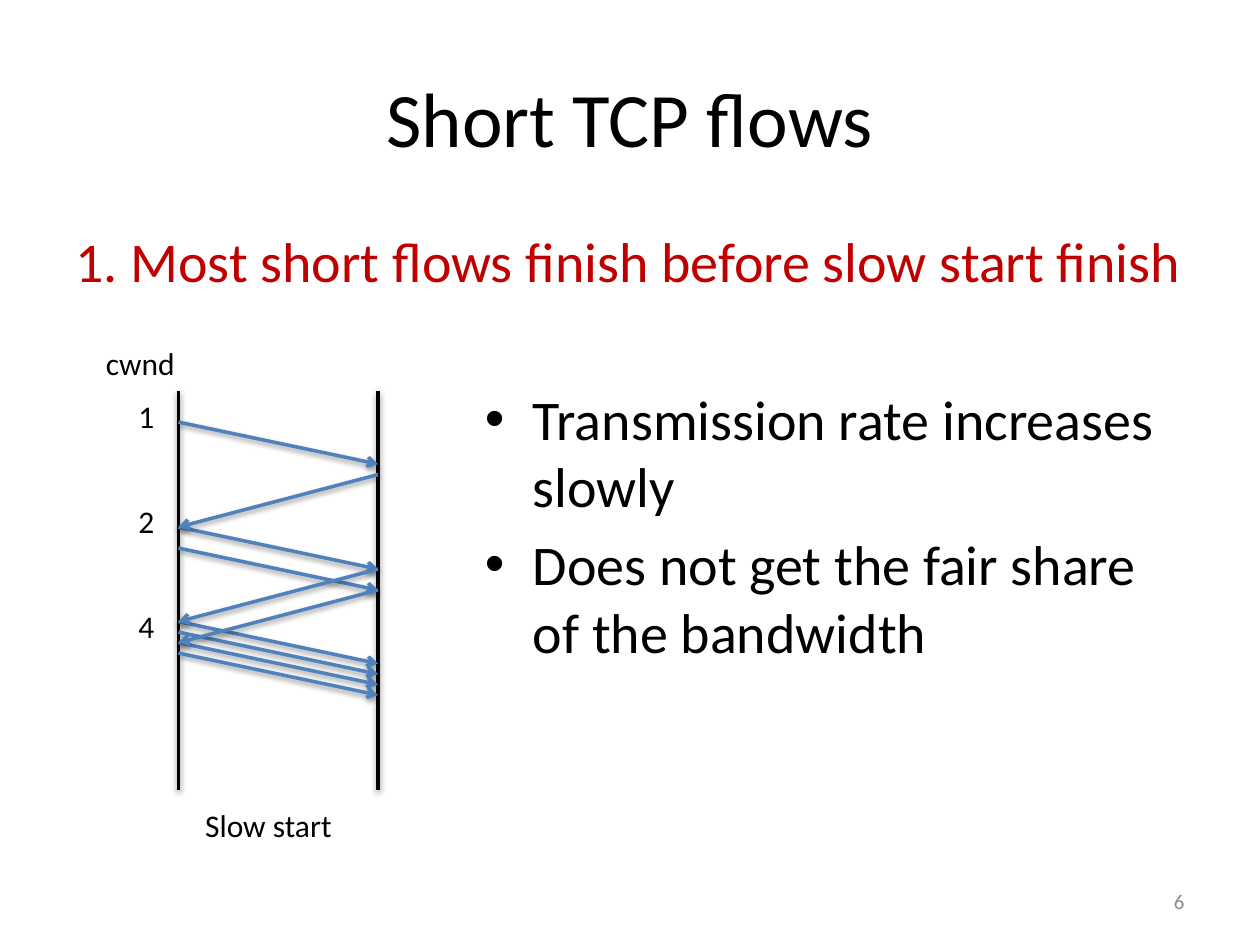
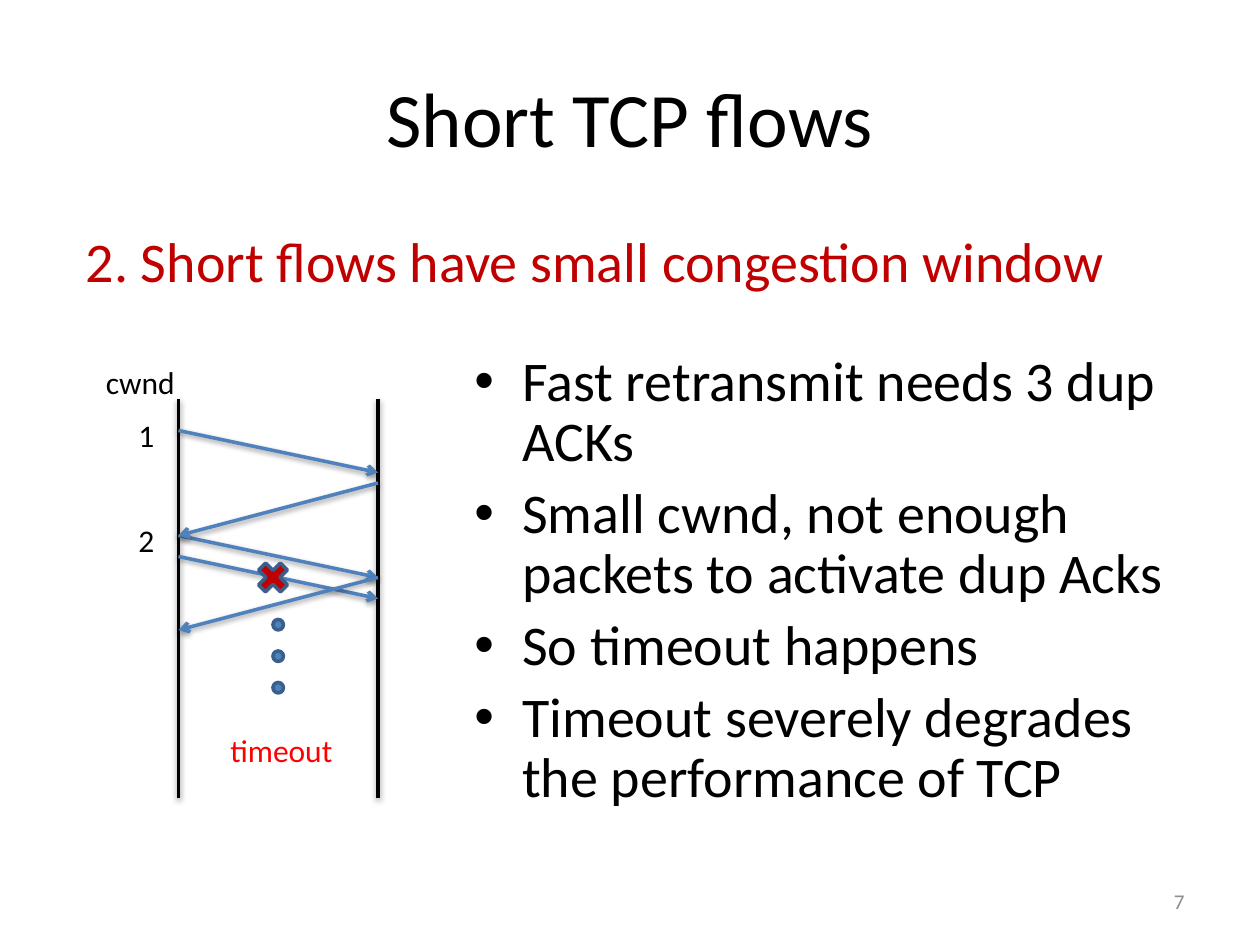
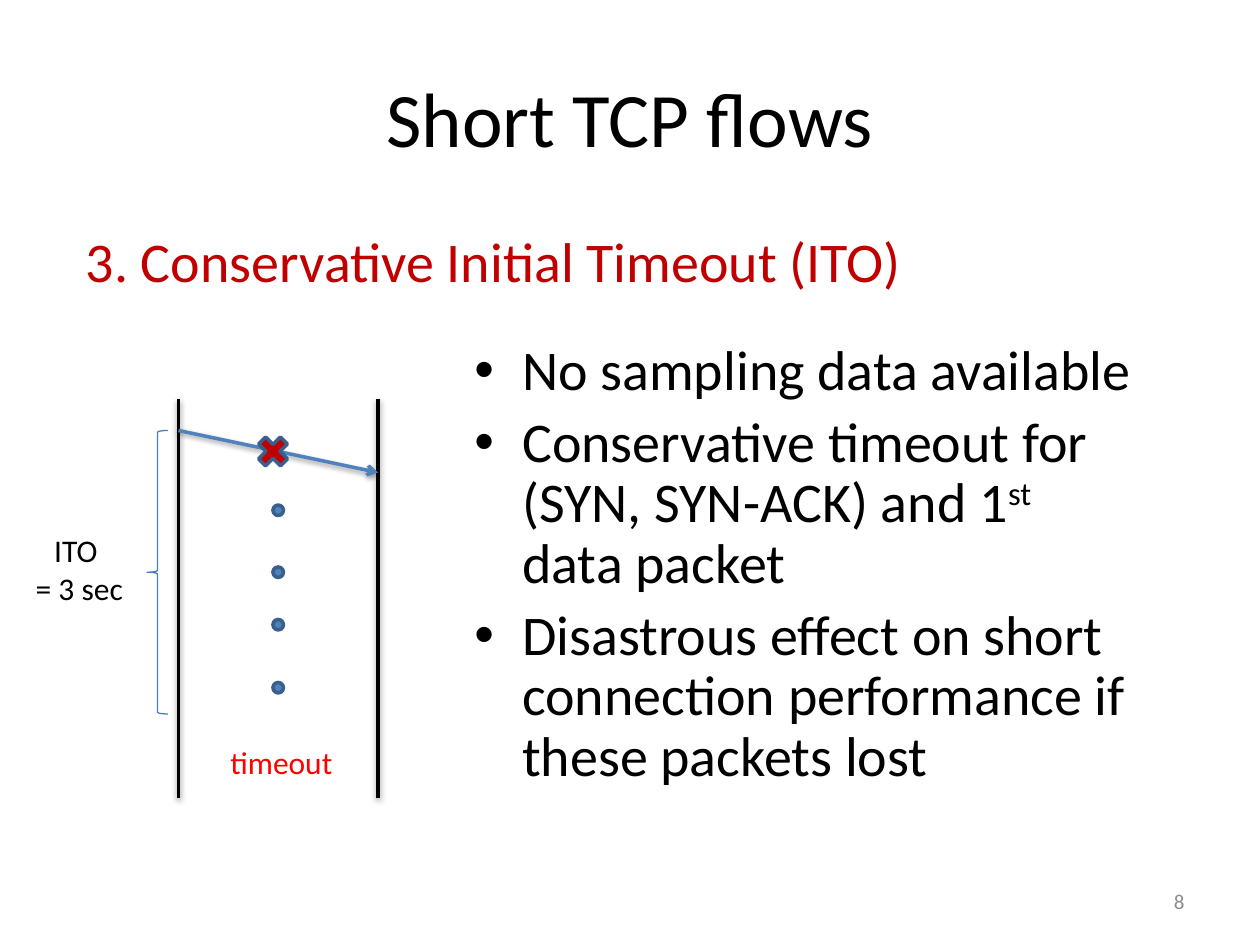
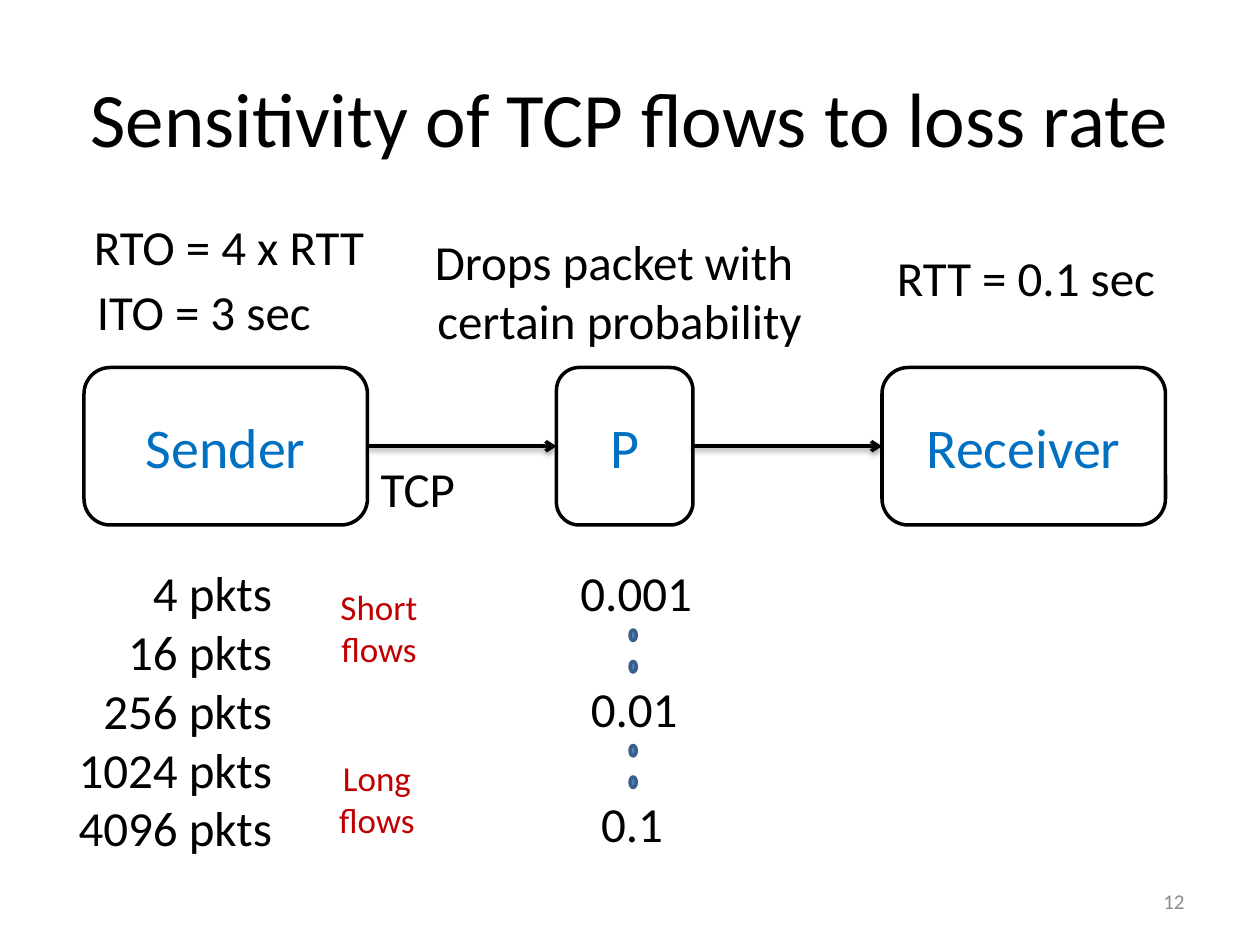
from collections import namedtuple

from lxml.etree import SubElement
from pptx import Presentation
from pptx.dml.color import RGBColor
from pptx.enum.shapes import MSO_CONNECTOR, MSO_SHAPE
from pptx.enum.text import MSO_ANCHOR, MSO_AUTO_SIZE, PP_ALIGN
from pptx.oxml import parse_xml
from pptx.oxml.ns import nsdecls, qn
from pptx.util import Inches, Pt

BLACK = RGBColor(0x00, 0x00, 0x00)
WHITE = RGBColor(0xFF, 0xFF, 0xFF)
CRIMSON = RGBColor(0xC0, 0x00, 0x00)
RED = RGBColor(0xFF, 0x00, 0x00)
BLUE = RGBColor(0x4F, 0x81, 0xBD)
NAVY = RGBColor(0x3A, 0x5F, 0x8C)
STEEL = RGBColor(0x4B, 0x7E, 0xBC)
SKY = RGBColor(0x00, 0x70, 0xC0)
GREY = RGBColor(0x8C, 0x8C, 0x8C)

FONT = "Calibri"
WIDTH, HEIGHT = Inches(10), Inches(7.5)
COLS, ROWS = 120, 90
CELL = WIDTH / COLS
LEFT, MID, RIGHT = PP_ALIGN.LEFT, PP_ALIGN.CENTER, PP_ALIGN.RIGHT
SHADOW = (
    f'<a:effectLst {nsdecls("a")}><a:outerShdw blurRad="40000" dist="20000" '
    'dir="5400000" rotWithShape="0"><a:srgbClr val="000000">'
    '<a:alpha val="38000"/></a:srgbClr></a:outerShdw></a:effectLst>'
)

Box = namedtuple("Box", "x y w h")
TITLE = Box(6, 3.6, 108, 15)
FOOTER = Box(86, 83.4, 28, 4.8)


def part(box, x, y, w, h):
    """Return a box placed by its offset inside another box."""
    return Box(box.x + x, box.y + y, w, h)


def emu(box):
    """Turn grid units into slide lengths."""
    return [round(n * CELL) for n in box]


def style(run, size, color):
    """Set the font of one run."""
    run.font.name, run.font.size = FONT, Pt(size)
    run.font.color.rgb = color


def write(slide, box, text, size, color=BLACK, align=LEFT, wrap=False, anchor=MSO_ANCHOR.TOP):
    """Add a text box, with parts between carets raised."""
    frame = slide.shapes.add_textbox(*emu(box)).text_frame
    frame.word_wrap = wrap
    frame.auto_size = MSO_AUTO_SIZE.NONE if wrap else MSO_AUTO_SIZE.SHAPE_TO_FIT_TEXT
    frame.vertical_anchor = anchor
    frame.text = text
    for para in frame.paragraphs:
        para.alignment = align
        first, *rest = para.text.split("^")
        para.text = first
        for piece in rest:
            para.add_run().text = piece
        for num, run in enumerate(para.runs):
            style(run, size, color)
            if num % 2:
                run.font._element.set("baseline", "30000")
    return frame


def hang(frame, bullet=False, space=None):
    """Give each paragraph a hanging indent and a gap above."""
    for para in frame.paragraphs:
        para.space_before, para.line_spacing = Pt(6.4), space
        props = para._p.get_or_add_pPr()
        props.set("marL", str(Inches(0.38)))
        props.set("indent", str(-Inches(0.38)))
        if bullet:
            SubElement(props, qn("a:buFont")).set("typeface", "Arial")
            SubElement(props, qn("a:buChar")).set("char", "•")


def form(slide, kind, box, fill, color, weight=2):
    """Add a preset shape without shadow."""
    shape = slide.shapes.add_shape(kind, *emu(box))
    shape.shadow.inherit = False
    if fill is None:
        shape.fill.background()
    else:
        shape.fill.solid()
        shape.fill.fore_color.rgb = fill
    shape.line.color.rgb, shape.line.width = color, Pt(weight)
    return shape


def link(slide, start, end, color, head=True):
    """Add a shadowed line between two grid points."""
    line = slide.shapes.add_connector(MSO_CONNECTOR.STRAIGHT, *emu(start + end))
    line.line.color.rgb, line.line.width = color, Pt(2)
    if head:
        SubElement(line.line._get_or_add_ln(), qn("a:tailEnd")).set("type", "arrow")
    line._element.spPr.append(parse_xml(SHADOW))
    return line


def frame(deck, title, number):
    """Start a slide with its title and page number."""
    slide = deck.slides.add_slide(deck.slide_layouts[6])
    write(slide, TITLE, title, 44, align=MID, wrap=True, anchor=MSO_ANCHOR.MIDDLE)
    write(slide, FOOTER, str(number), 12, GREY, RIGHT, True, MSO_ANCHOR.MIDDLE)
    return slide


def point(deck, number, head, box, items, area, space=None):
    """Build a slide with a red heading and a bullet list."""
    slide = frame(deck, "Short TCP flows", number)
    hang(write(slide, box, head, 32, CRIMSON, wrap=True))
    hang(write(slide, area, "\n".join(items), 32, wrap=True), True, space)
    return slide


def lanes(slide, box, sends, acks=()):
    """Draw two time lines with packets right and replies left."""
    near, far = box.x, box.x + box.w
    for x in (near, far):
        link(slide, (x, box.y), (x, box.y + box.h), BLACK, False)
    for row in sends:
        link(slide, (near, box.y + row), (far, box.y + row + 4), BLUE)
    for row in acks:
        link(slide, (far, box.y + row), (near, box.y + row + 5), BLUE)


def window(slide, box, sizes, shift=0):
    """Label the congestion window beside the time lines."""
    write(slide, part(box, -8.1, shift - 5, 9.1, 4.8), "cwnd", 18)
    for num, size in enumerate(sizes):
        write(slide, part(box, -5, shift + 10 * num, 4, 4.8), size, 18)


def dots(slide, box, rows, w=1):
    """Stack small dots at the given rows."""
    for row in rows:
        form(slide, MSO_SHAPE.FLOWCHART_CONNECTOR, part(box, 0, row, w, 1), BLUE, NAVY)


def loss(slide, box, cross, rows, label):
    """Mark a lost packet and the wait that ends in a timeout."""
    form(slide, MSO_SHAPE.MATH_MULTIPLY, part(box, 7, cross, 4, 4), CRIMSON, NAVY)
    dots(slide, part(box, 9, 0, 1, box.h), rows)
    write(slide, part(box, 3.76, label, 12.2, 4.8), "timeout", 18, RED)


def wait(slide, box):
    """Bracket the initial timeout beside the time lines."""
    form(slide, MSO_SHAPE.LEFT_BRACE, part(box, -3, 3, 2, 27), None, STEEL, 0.75)
    write(slide, part(box, -14.84, 12, 10.8, 8.5), "ITO \n= 3 sec", 18, align=MID)


def chain(slide, box, names, widths):
    """Draw named boxes with equal gaps, joined by arrows."""
    gap = (box.w - sum(widths)) / (len(widths) - 1)
    x, last = 0, None
    for name, w in zip(names, widths):
        node = form(slide, MSO_SHAPE.ROUNDED_RECTANGLE, part(box, x, 0, w, box.h), WHITE, BLACK)
        node.text_frame.text = name
        para = node.text_frame.paragraphs[0]
        para.alignment = MID
        style(para.runs[0], 32, SKY)
        if last:
            line = link(slide, (0, 0), (1, 1), BLACK)
            line.begin_connect(last, 3)
            line.end_connect(node, 1)
        x, last = x + w + gap, node


def facts(slide, box):
    """Write the timing notes around the chain."""
    notes = [
        ("Drops packet with \ncertain probability", 32, -13.5, 38, 12.5),
        ("RTO = 4 x RTT", -0.4, -15, 28.4, 6.8),
        ("RTT = 0.1 sec", 76, -12, 27.4, 6.8),
        ("ITO = 3 sec", -0.1, -8.8, 23, 6.8),
        ("TCP", 27, 8.1, 9.6, 6.8),
    ]
    for text, *place in notes:
        write(slide, part(box, *place), text, 28, align=MID)


def flows(slide, box):
    """List the flow sizes and the groups they form."""
    sizes = "\n".join(f"{4 ** n} pkts" for n in (1, 2, 4, 5, 6))
    write(slide, part(box, 0, 0, 21.1, box.h), sizes, 28, align=RIGHT)
    for name, x, y in (("Short", 25.2, 2.2), ("Long", 25, 18.5)):
        write(slide, part(box, x, y, 9.8, 9.2), f"{name}\nflows", 20, CRIMSON, MID)


def rates(slide, box):
    """List the loss rates with dots between them."""
    step = 11
    for num, rate in enumerate(("0.001", "0.01", "0.1")):
        w = box.w - 2.4 * num
        write(slide, part(box, num, step * num, w, 6.8), rate, 28, align=MID)
    spots = [step * num + row for num in range(2) for row in (7, 10)]
    dots(slide, part(box, 6, 0, 1, box.h), spots, 0.6)


def main():
    """Build the four slides and save them."""
    deck = Presentation()
    deck.slide_width, deck.slide_height = WIDTH, HEIGHT
    head = Box(7, 21, 108, 12)
    high, low = Box(17, 37.2, 19, 38), Box(17, 38, 19, 38)

    slide = point(
        deck, 6, "1. Most short flows finish before slow start finish", Box(6, 21, 108, 11),
        ["Transmission rate increases slowly", "Does not get the fair share of the bandwidth"],
        Box(45, 36, 68, 36),
    )
    lanes(slide, high, (3, 13, 15, 22, 23, 24, 25), (8, 17, 19))
    window(slide, high, "124")
    write(slide, part(high, 1.36, 39, 14.6, 4.8), "Slow start", 18)

    slide = point(
        deck, 7, "2. Short flows have small congestion window", head,
        ["Fast retransmit needs 3 dup ACKs",
         "Small cwnd, not enough packets to activate dup Acks",
         "So timeout happens",
         "Timeout severely degrades the performance of TCP"],
        Box(44, 33, 69, 46), 0.9,
    )
    lanes(slide, low, (3, 13, 15), (8, 17))
    window(slide, low, "12", 1)
    loss(slide, low, 15, (21, 24, 27), 31)

    slide = point(
        deck, 8, "3. Conservative Initial Timeout (ITO)", head,
        ["No sampling data available",
         "Conservative timeout for (SYN, SYN-ACK) and 1^st^ data packet",
         "Disastrous effect on short connection performance if these packets lost"],
        Box(44, 32, 66, 48), 0.9,
    )
    lanes(slide, low, (3,))
    loss(slide, low, 3, (10.1, 16, 21, 27), 32.2)
    wait(slide, low)

    slide = frame(deck, "Sensitivity of TCP flows to loss rate", 12)
    path = Box(8, 35, 103, 15)
    chain(slide, path, ("Sender", "P", "Receiver"), (27, 13, 27))
    facts(slide, path)
    flows(slide, Box(6, 53, 35, 29.5))
    rates(slide, Box(54, 53, 13.2, 29.5))

    deck.save("out.pptx")


if __name__ == "__main__":
    main()
